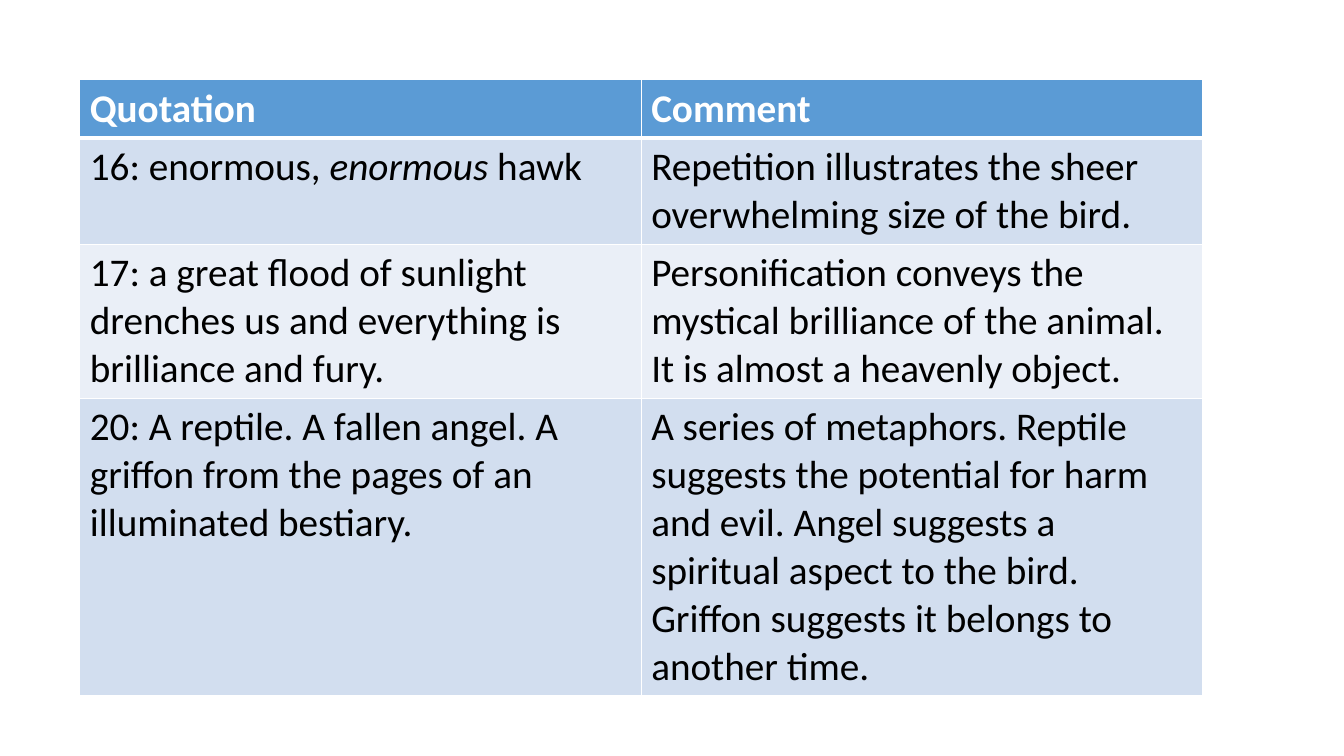
from dataclasses import dataclass

from lxml.etree import SubElement
from pptx import Presentation
from pptx.dml.color import RGBColor
from pptx.oxml.ns import qn
from pptx.table import _Cell as Cell
from pptx.util import Pt


@dataclass(frozen=True)
class Theme:
    font: str = "Calibri"
    size: float = 28
    header_fill: str = "5B9BD5"
    bands: tuple[str, str] = ("D2DEEF", "EAEFF7")
    header_text: str = "FFFFFF"
    body_text: str = "000000"
    border: str = "FFFFFF"
    border_width: float = 1
    header_rule: float = 3


@dataclass(frozen=True)
class Row:
    quotation: str
    comment: str
    height: float


THEME = Theme()
LEFT, TOP, COLUMN_WIDTH = 57, 57, 401
ROWS = [
    Row("Quotation", "Comment", 40),
    Row("16: enormous, *enormous* hawk",
        "Repetition illustrates the sheer overwhelming size of the bird.", 76),
    Row("17: a great flood of sunlight drenches us and everything is "
        "brilliance and fury.",
        "Personification conveys the mystical brilliance of the animal. "
        "It is almost a heavenly object.", 110),
    Row("20: A reptile. A fallen angel. A griffon from the pages of an "
        "illuminated bestiary.",
        "A series of metaphors. Reptile suggests the potential for harm and "
        "evil. Angel suggests a spiritual aspect to the bird. Griffon suggests "
        "it belongs to another time.", 212),
]


def set_borders(cell: Cell, top: float, bottom: float) -> None:
    tcPr = cell._tc.get_or_add_tcPr()
    side = THEME.border_width
    for tag, width in (("lnL", side), ("lnR", side), ("lnT", top), ("lnB", bottom)):
        ln = SubElement(tcPr, qn(f"a:{tag}"), w=str(Pt(width)))
        fill = SubElement(ln, qn("a:solidFill"))
        SubElement(fill, qn("a:srgbClr"), val=THEME.border)


def write_text(cell: Cell, text: str, color: str, bold: bool) -> None:
    """Write the text in runs; words between asterisks become italic."""
    p = cell.text_frame.paragraphs[0]
    for i, part in enumerate(text.split("*")):
        r = p.add_run()
        r.text = part
        r.font.name = THEME.font
        r.font.size = Pt(THEME.size)
        r.font.bold = bold
        r.font.italic = i % 2 == 1
        r.font.color.rgb = RGBColor.from_string(color)


def fill_cell(cell: Cell, text: str, row: int) -> None:
    header = row == 0
    set_borders(
        cell,
        top=THEME.header_rule if row == 1 else THEME.border_width,
        bottom=THEME.header_rule if header else THEME.border_width,
    )
    fill = THEME.header_fill if header else THEME.bands[(row - 1) % 2]
    cell.fill.solid()
    cell.fill.fore_color.rgb = RGBColor.from_string(fill)
    write_text(cell, text, THEME.header_text if header else THEME.body_text, header)


def main() -> None:
    prs = Presentation()
    prs.slide_width, prs.slide_height = Pt(960), Pt(540)
    s = prs.slides.add_slide(prs.slide_layouts[6])
    table = s.shapes.add_table(
        len(ROWS), 2, Pt(LEFT), Pt(TOP),
        Pt(2 * COLUMN_WIDTH), Pt(sum(row.height for row in ROWS)),
    ).table
    for column in table.columns:
        column.width = Pt(COLUMN_WIDTH)
    for i, row in enumerate(ROWS):
        table.rows[i].height = Pt(row.height)
        for j, text in enumerate((row.quotation, row.comment)):
            fill_cell(table.cell(i, j), text, i)
    prs.save("out.pptx")


if __name__ == "__main__":
    main()
